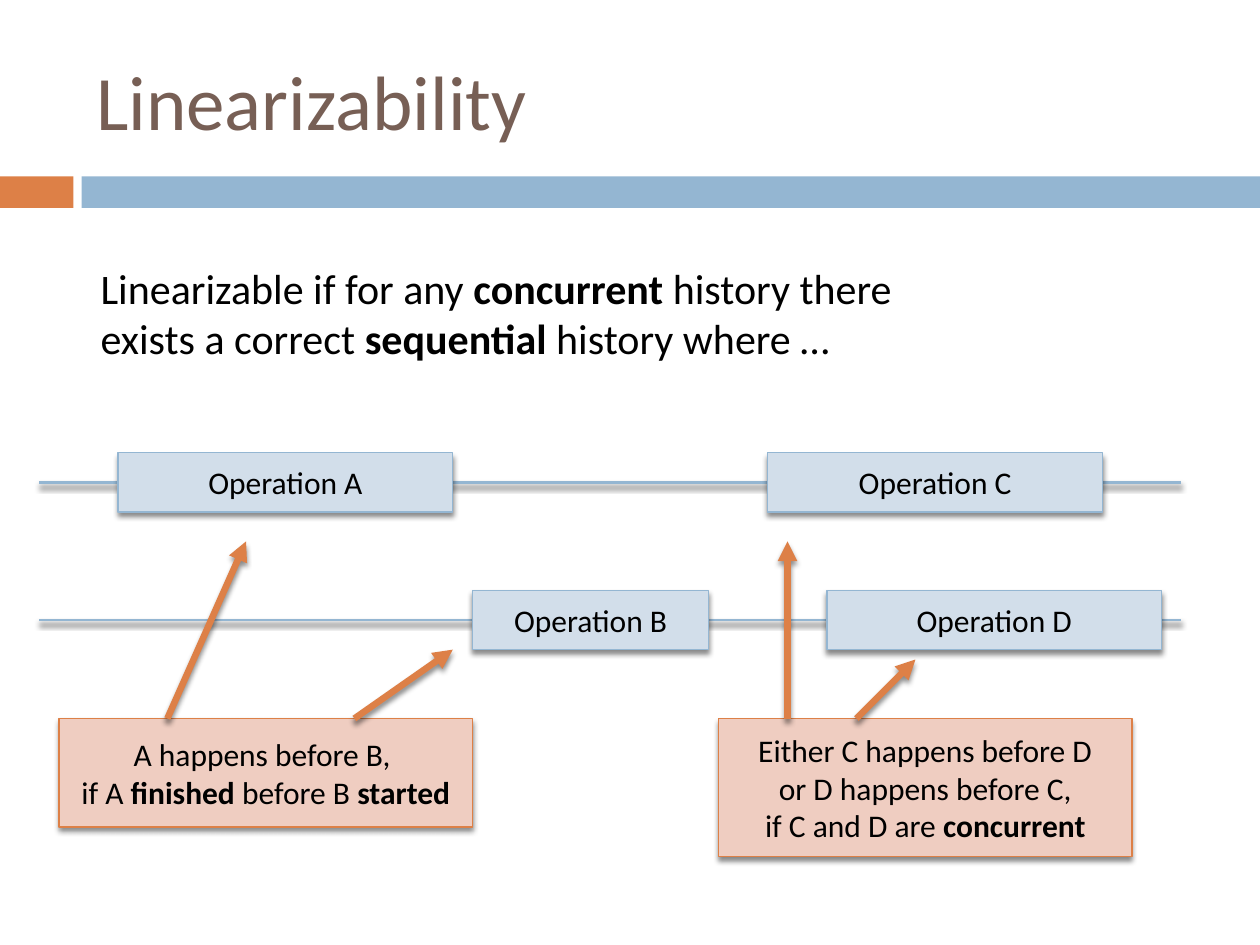
from lxml.etree import SubElement
from pptx import Presentation
from pptx.dml.color import RGBColor
from pptx.enum.shapes import MSO_CONNECTOR, MSO_SHAPE
from pptx.enum.text import MSO_ANCHOR, PP_ALIGN
from pptx.oxml.ns import qn
from pptx.util import Pt

TITLE = "Linearizability"
# Text between ** marks is bold.
DEFINITION = ["Linearizable if for any **concurrent** history there",
              "exists a correct **sequential** history where …"]

# Diagram positions are in grid units.
UNIT = 11.25
TIMELINE_START, TIMELINE_END = 2, 60
TIMELINES = [24.5, 31.5]
OPERATION_HEIGHT = 3
OPERATIONS = [  # name, timeline, left, width
    ("Operation A", 0, 6, 17),
    ("Operation C", 0, 39, 17),
    ("Operation B", 1, 24, 12),
    ("Operation D", 1, 42, 17),
]
NOTE_TOP, NOTE_WIDTH = 36.5, 21
NOTES = [  # left, height, lines, arrows as (start x, end x, end y)
    (3, 5.5,
     ["A happens before B, ", "if A **finished** before B **started**"],
     [(8.5, 12.5, 27.5), (18, 23, 33)]),
    (36.5, 7,
     ["Either C happens before D", "or D happens before C,",
      "if C and D are **concurrent**"],
     [(40, 40, 27.5), (43.5, 46.5, 33.5)]),
]

COLORS = {"title": "775F55", "text": "000000", "blue": "94B6D2",
          "orange": "DD8047", "operation": "D2DEEA", "note": "EFCDC1",
          "shadow": "000000"}
FONT = "Calibri"
BAND_TOP, BAND_HEIGHT = 100.8, 18
BANDS = [(0, 42, "orange"), (46.6, 673.4, "blue")]  # left, width, colour


def rgb(name):
    return RGBColor.from_string(COLORS[name])


def add_shadow(item):
    effects = SubElement(item._element.spPr, qn("a:effectLst"))
    shadow = SubElement(effects, qn("a:outerShdw"), blurRad=str(Pt(3)),
                        dist=str(Pt(2.4)), dir="5400000", rotWithShape="0")
    color = SubElement(shadow, qn("a:srgbClr"), val=COLORS["shadow"])
    SubElement(color, qn("a:alpha"), val="45000")


def write(frame, lines, size, color="text", align=PP_ALIGN.LEFT):
    for index, line in enumerate(lines):
        paragraph = frame.add_paragraph() if index else frame.paragraphs[0]
        paragraph.alignment = align
        for part, words in enumerate(line.split("**")):
            if not words:
                continue
            run = paragraph.add_run()
            run.text = words
            run.font.color.rgb = rgb(color)
            font_format = {"name": FONT, "size": Pt(size), "bold": part % 2 == 1}
            for key, value in font_format.items():
                setattr(run.font, key, value)


def add_text(slide, box, lines, size, color, frame_format):
    frame = slide.shapes.add_textbox(*map(Pt, box)).text_frame
    for key, value in frame_format.items():
        setattr(frame, key, value)
    write(frame, lines, size, color)


def add_rectangle(slide, box, fill):
    rectangle = slide.shapes.add_shape(MSO_SHAPE.RECTANGLE, *map(Pt, box))
    rectangle.fill.solid()
    rectangle.fill.fore_color.rgb = rgb(fill)
    return rectangle


def add_label(slide, grid_box, lines, fill, outline):
    label = add_rectangle(slide, [UNIT * v for v in grid_box], fill)
    label.line.color.rgb = rgb(outline)
    label.line.width = Pt(0.79)
    add_shadow(label)
    label.text_frame.word_wrap = True
    label.text_frame.vertical_anchor = MSO_ANCHOR.MIDDLE
    write(label.text_frame, lines, 18, align=PP_ALIGN.CENTER)


def add_line(slide, grid_ends, color, width, arrow=False):
    line = slide.shapes.add_connector(
        MSO_CONNECTOR.STRAIGHT, *[Pt(UNIT * v) for v in grid_ends])
    line.line.color.rgb = rgb(color)
    line.line.width = Pt(width)
    if arrow:
        SubElement(line.line._get_or_add_ln(), qn("a:tailEnd"), type="triangle")
    add_shadow(line)


def main():
    deck = Presentation()
    deck.slide_width, deck.slide_height = Pt(720), Pt(540)
    slide = deck.slides.add_slide(deck.slide_layouts[6])

    for left, width, color in BANDS:
        band = add_rectangle(slide, (left, BAND_TOP, width, BAND_HEIGHT), color)
        band.line.fill.background()
        band.shadow.inherit = False
    for y in TIMELINES:
        add_line(slide, (TIMELINE_START, y, TIMELINE_END, y), "blue", 1.5)

    add_text(slide, (48, 18, 642, 78), [TITLE], 44, "title",
             {"word_wrap": True, "vertical_anchor": MSO_ANCHOR.MIDDLE})
    for name, timeline, left, width in OPERATIONS:
        top = TIMELINES[timeline] - OPERATION_HEIGHT / 2
        add_label(slide, (left, top, width, OPERATION_HEIGHT), [name],
                  "operation", "blue")
    add_text(slide, (50.4, 146.25, 475, 65.5), DEFINITION, 24, "text",
             {"word_wrap": False})

    for left, height, lines, _ in NOTES:
        add_label(slide, (left, NOTE_TOP, NOTE_WIDTH, height), lines,
                  "note", "orange")
    for *_, arrows in NOTES:
        for start_x, end_x, end_y in arrows:
            add_line(slide, (start_x, NOTE_TOP, end_x, end_y), "orange", 3.75,
                     arrow=True)

    deck.save("out.pptx")


if __name__ == "__main__":
    main()
